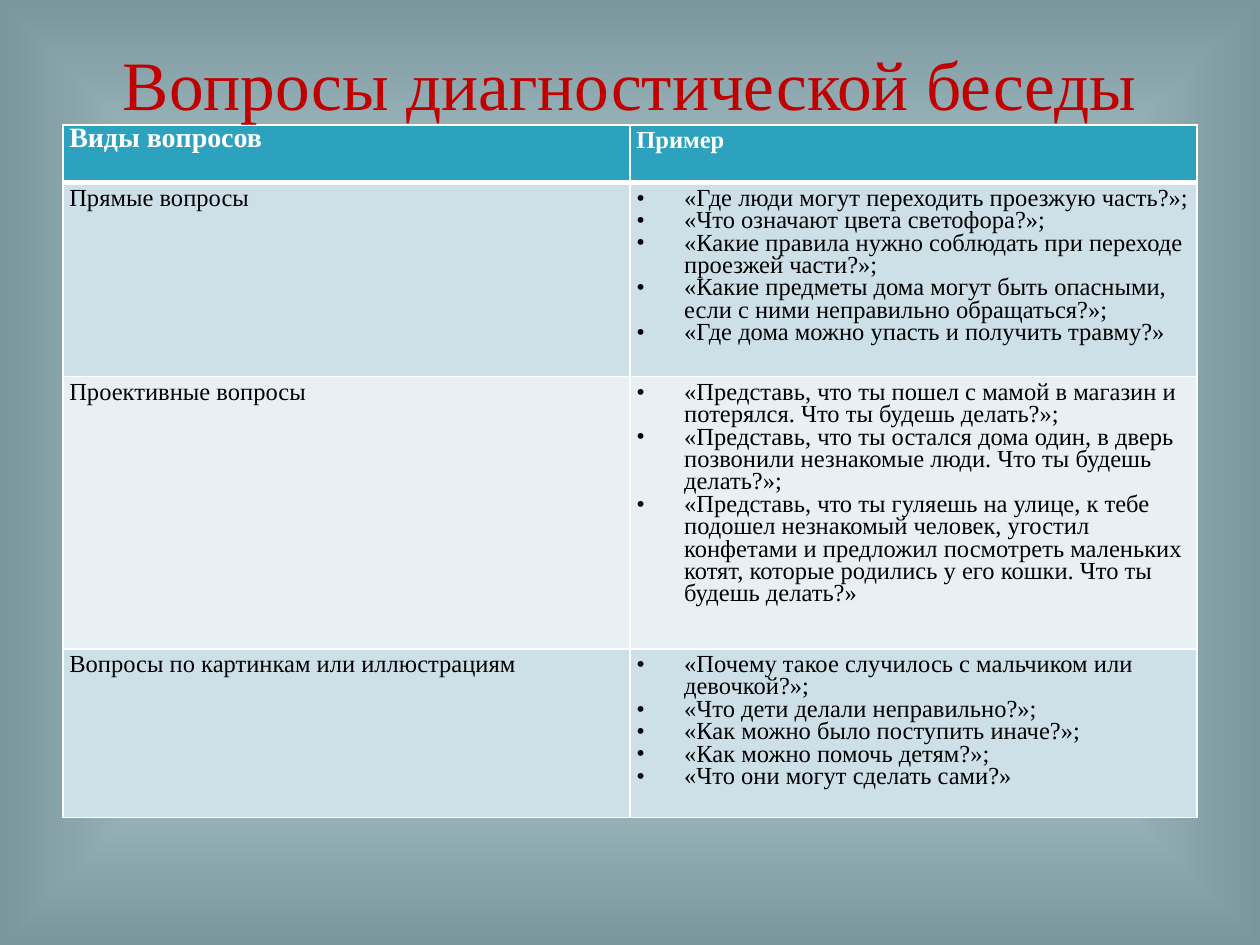
from typing import NamedTuple

from lxml import etree
from pptx import Presentation
from pptx.dml.color import RGBColor
from pptx.enum.text import MSO_ANCHOR, PP_ALIGN
from pptx.oxml.ns import qn
from pptx.util import Inches, Pt

TOP, CENTER = MSO_ANCHOR.TOP, PP_ALIGN.CENTER
FONT = "Times New Roman"
COLORS = {
    "title": "C00000", "header": "2DA2BF", "odd": "CDE0E8", "even": "E8F0F4",
    "white": "FFFFFF", "black": "000000", "glow": "E1FAFF", "edge": "7B969C",
}


class QuestionRow(NamedTuple):
    kind: str
    examples: list[str]
    height: float


HEADER = QuestionRow("Виды вопросов", ["Пример"], 0.46)
ROWS = [
    QuestionRow("Прямые вопросы", [
        "«Где люди могут переходить проезжую часть?»;",
        "«Что означают цвета светофора?»;",
        "«Какие правила нужно соблюдать при переходе проезжей части?»;",
        "«Какие предметы дома могут быть опасными, если с ними неправильно обращаться?»;",
        "«Где дома можно упасть и получить травму?»",
    ], 1.54),
    QuestionRow("Проективные вопросы", [
        "«Представь, что ты пошел с мамой в магазин и потерялся. Что ты будешь делать?»;",
        "«Представь, что ты остался дома один, в дверь позвонили незнакомые люди. "
        "Что ты будешь делать?»;",
        "«Представь, что ты гуляешь на улице, к тебе подошел незнакомый человек, "
        "угостил конфетами и предложил посмотреть маленьких котят, которые родились "
        "у его кошки. Что ты будешь делать?»",
    ], 2.16),
    QuestionRow("Вопросы по картинкам или иллюстрациям", [
        "«Почему такое случилось с мальчиком или девочкой?»;",
        "«Что дети делали неправильно?»;",
        "«Как можно было поступить иначе?»;",
        "«Как можно помочь детям?»;",
        "«Что они могут сделать сами?»",
    ], 1.34),
]


def rgb(name: str) -> RGBColor:
    return RGBColor.from_string(COLORS[name])


def add_run(p, text: str, size: float, color: str, bold: bool = False) -> None:
    r = p.add_run()
    r.text = text
    for key, value in {"name": FONT, "size": Pt(size), "bold": bold}.items():
        setattr(r.font, key, value)
    r.font.color.rgb = rgb(color)


def set_background(s) -> None:
    fill = s.background.fill
    fill.gradient()
    for stop, color, pos in zip(fill.gradient_stops, ("glow", "edge"), (0, 1)):
        stop.color.rgb = rgb(color)
        stop.position = pos
    grad = s.background.element.find(".//" + qn("a:gradFill"))
    grad.remove(grad.find(qn("a:lin")))
    shade = etree.SubElement(grad, qn("a:path"), path="shape")
    etree.SubElement(shade, qn("a:fillToRect"),
                     {side: "50000" for side in "ltrb"})


def add_bullet(p) -> None:
    pPr = p._p.get_or_add_pPr()
    pPr.set("marL", str(Inches(0.38)))
    pPr.set("indent", str(Inches(-0.38)))
    etree.SubElement(pPr, qn("a:buFont"), typeface=FONT)
    etree.SubElement(pPr, qn("a:buChar"), char="•")


def set_borders(cell, widths: dict[str, float]) -> None:
    tcPr = cell._tc.get_or_add_tcPr()
    for side, width in widths.items():
        ln = etree.SubElement(tcPr, qn(f"a:ln{side}"), w=str(Pt(width)))
        solid = etree.SubElement(ln, qn("a:solidFill"))
        etree.SubElement(solid, qn("a:srgbClr"), val=COLORS["white"])


def fill_cell(cell, texts: list[str], size: float, color: str, fill: str,
              widths: dict[str, float], bold: bool = False, bullets: bool = False) -> None:
    for side in ("left", "top", "right", "bottom"):
        setattr(cell, f"margin_{side}", Inches(0.05))
    cell.vertical_anchor = TOP
    set_borders(cell, widths)
    cell.fill.solid()
    cell.fill.fore_color.rgb = rgb(fill)
    tf = cell.text_frame
    for i, text in enumerate(texts):
        p = tf.paragraphs[0] if i == 0 else tf.add_paragraph()
        p.line_spacing = Pt(12.8)
        if bullets:
            add_bullet(p)
        add_run(p, text, size, color, bold)


def add_title(s, text: str) -> None:
    tf = s.shapes.add_textbox(Inches(0.5), Inches(0.3), Inches(9), Inches(1.25)).text_frame
    for key, value in {"word_wrap": True, "vertical_anchor": TOP,
                       "margin_top": Inches(0.03)}.items():
        setattr(tf, key, value)
    p = tf.paragraphs[0]
    p.alignment = CENTER
    add_run(p, text, 39.6, "title")


def add_question_table(s) -> None:
    rows = [HEADER, *ROWS]
    height = sum(row.height for row in rows)
    table = s.shapes.add_table(len(rows), 2, Inches(0.5), Inches(0.99),
                               Inches(9), Inches(height)).table
    for i, row in enumerate(rows):
        table.rows[i].height = Inches(row.height)
        kind, examples = table.cell(i, 0), table.cell(i, 1)
        # The line under the header is thicker
        widths = {"L": 1, "R": 1, "T": 3 if i == 1 else 1, "B": 3 if i == 0 else 1}
        if i == 0:
            fill_cell(kind, [row.kind], 16, "white", "header", widths, bold=True)
            fill_cell(examples, row.examples, 14, "white", "header", widths, bold=True)
        else:
            band = "odd" if i % 2 else "even"
            fill_cell(kind, [row.kind], 14, "black", band, widths)
            fill_cell(examples, row.examples, 14, "black", band, widths, bullets=True)


def main() -> None:
    prs = Presentation()
    prs.slide_width, prs.slide_height = Inches(10), Inches(7.5)
    s = prs.slides.add_slide(prs.slide_layouts[6])
    set_background(s)
    # Table first, title on top
    add_question_table(s)
    add_title(s, "Вопросы диагностической беседы")
    prs.save("out.pptx")


if __name__ == "__main__":
    main()
